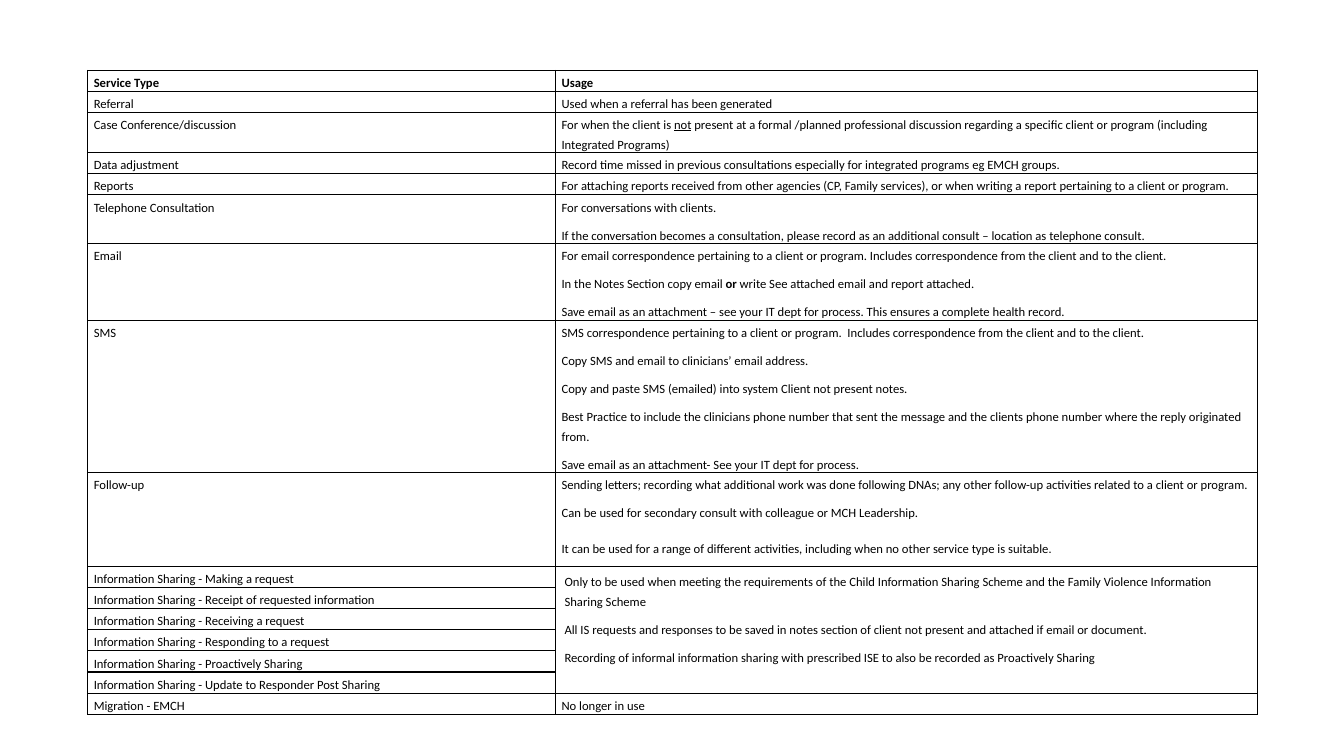
from lxml import etree
from pptx import Presentation
from pptx.dml.color import RGBColor
from pptx.enum import text
from pptx.oxml import ns
from pptx.util import Inches, Pt

BLACK = RGBColor(0, 0, 0)
SHARING_ROWS = (9, 14)
CELL_MARGINS = {"margin_left": 0.06, "margin_top": 0.01, "margin_right": 0.06, "margin_bottom": 0}
SHARING_MARGINS = {"margin_left": 0.09, "margin_top": 0.04, "margin_right": 0.09, "margin_bottom": 0.04}
PARAGRAPH_FORMAT = {"line_spacing": Pt(14), "space_before": Pt(0), "space_after": Pt(6)}
RUN_FORMAT = {"name": "Calibri", "size": Pt(9), "bold": False}

# Row height, service type, usage paragraphs; a tuple holds (words, run format) pairs
services = [
    (0.19, "Service Type", ["Usage"]),
    (0.21, "Referral", ["Used when a referral has been generated"]),
    (0.38, "Case Conference/discussion", [
        (("For when the client is ", {}), ("not", {"underline": True}),
         (" present at a formal /planned professional discussion regarding a specific client"
          " or program (including Integrated Programs)", {}))]),
    (0.21, "Data adjustment", [
        "Record time missed in previous consultations especially for integrated programs eg EMCH groups."]),
    (0.21, "Reports", [
        "For attaching reports received from other agencies (CP, Family services), "
        "or when writing a report pertaining to a client or program."]),
    (0.45, "Telephone Consultation", [
        "For conversations with clients.",
        "If the conversation becomes a consultation, please record as an additional consult"
        " – location as telephone consult."]),
    (0.69, "Email", [
        "For email correspondence pertaining to a client or program. "
        "Includes correspondence from the client and to the client.",
        (("In the Notes Section copy email ", {}), ("or", {"bold": True}),
         (" write See attached email and report attached.", {})),
        "Save email as an attachment – see your IT dept for process. "
        "This ensures a complete health record."]),
    (1.34, "SMS", [
        "SMS correspondence pertaining to a client or program.  "
        "Includes correspondence from the client and to the client.",
        "Copy SMS and email to clinicians’ email address.",
        "Copy and paste SMS (emailed) into system Client not present notes.",
        "Best Practice to include the clinicians phone number that sent the message "
        "and the clients phone number where the reply originated from.",
        "Save email as an attachment- See your IT dept for process."]),
    (0.93, "Follow-up", [
        "Sending letters; recording what additional work was done following DNAs; "
        "any other follow-up activities related to a client or program.",
        "Can be used for secondary consult with colleague or MCH Leadership.",
        (("It can be used for a range of different activities, "
          "including when no other service type is suitable", {}), (".", {"name": "Arial"}))]),
    (0.21, "Information Sharing - Making a request", [
        "Only to be used when meeting the requirements of the Child Information Sharing Scheme "
        "and the Family Violence Information Sharing Scheme",
        "All IS requests and responses to be saved in notes section of client not present "
        "and attached if email or document.",
        "Recording of informal information sharing with prescribed ISE "
        "to also be recorded as Proactively Sharing"]),
    (0.21, "Information Sharing - Receipt of requested information", []),
    (0.21, "Information Sharing - Receiving a request", []),
    (0.21, "Information Sharing - Responding to a request", []),
    (0.21, "Information Sharing - Proactively Sharing", []),
    (0.21, "Information Sharing - Update to Responder Post Sharing", []),
    (0.21, "Migration - EMCH", ["No longer in use"]),
]


def style_cell(cell):
    """Give the cell its margins, thin black borders and no fill."""
    for side, margin in CELL_MARGINS.items():
        setattr(cell, side, Inches(margin))
    properties = cell._tc.get_or_add_tcPr()
    for edge in ("a:lnL", "a:lnR", "a:lnT", "a:lnB"):
        line = etree.SubElement(properties, ns.qn(edge), w=str(Pt(1)))
        solid = etree.SubElement(line, ns.qn("a:solidFill"))
        etree.SubElement(solid, ns.qn("a:srgbClr"), val=str(BLACK))
    cell.fill.background()


def write_cell(cell, paragraphs, bold):
    for index, content in enumerate(paragraphs):
        frame = cell.text_frame
        paragraph = frame.paragraphs[0] if index == 0 else frame.add_paragraph()
        for attribute, value in PARAGRAPH_FORMAT.items():
            setattr(paragraph, attribute, value)
        pieces = ((content, {}),) if isinstance(content, str) else content
        for words, changes in pieces:
            run = paragraph.add_run()
            run.text = words
            for attribute, value in {**RUN_FORMAT, "bold": bold, **changes}.items():
                setattr(run.font, attribute, value)
            run.font.color.rgb = BLACK


deck = Presentation()
deck.slide_width, deck.slide_height = Inches(13.33), Inches(7.5)
slide = deck.slides.add_slide(deck.slide_layouts[6])

table = slide.shapes.add_table(len(services), 2, Inches(0.87), Inches(0.7),
                               Inches(11.6), Inches(6.08)).table
table.first_row = table.horz_banding = False
for column, width in zip(table.columns, (4.64, 6.96)):
    column.width = Inches(width)

for row, (height, service, usage) in enumerate(services):
    table.rows[row].height = Inches(height)
    for column, paragraphs in enumerate(([service], usage)):
        cell = table.cell(row, column)
        style_cell(cell)
        write_cell(cell, paragraphs, bold=row == 0)
        if row == 0:
            cell.vertical_anchor = text.MSO_ANCHOR.BOTTOM

follow_up_closing = table.cell(8, 1).text_frame.paragraphs[-1]
follow_up_closing.line_spacing = Pt(13.5)
follow_up_closing.space_before = Pt(6)

first, last = SHARING_ROWS
sharing_usage = table.cell(first, 1)
sharing_usage.merge(table.cell(last, 1))
for side, margin in SHARING_MARGINS.items():
    setattr(sharing_usage, side, Inches(margin))

deck.save("out.pptx")
